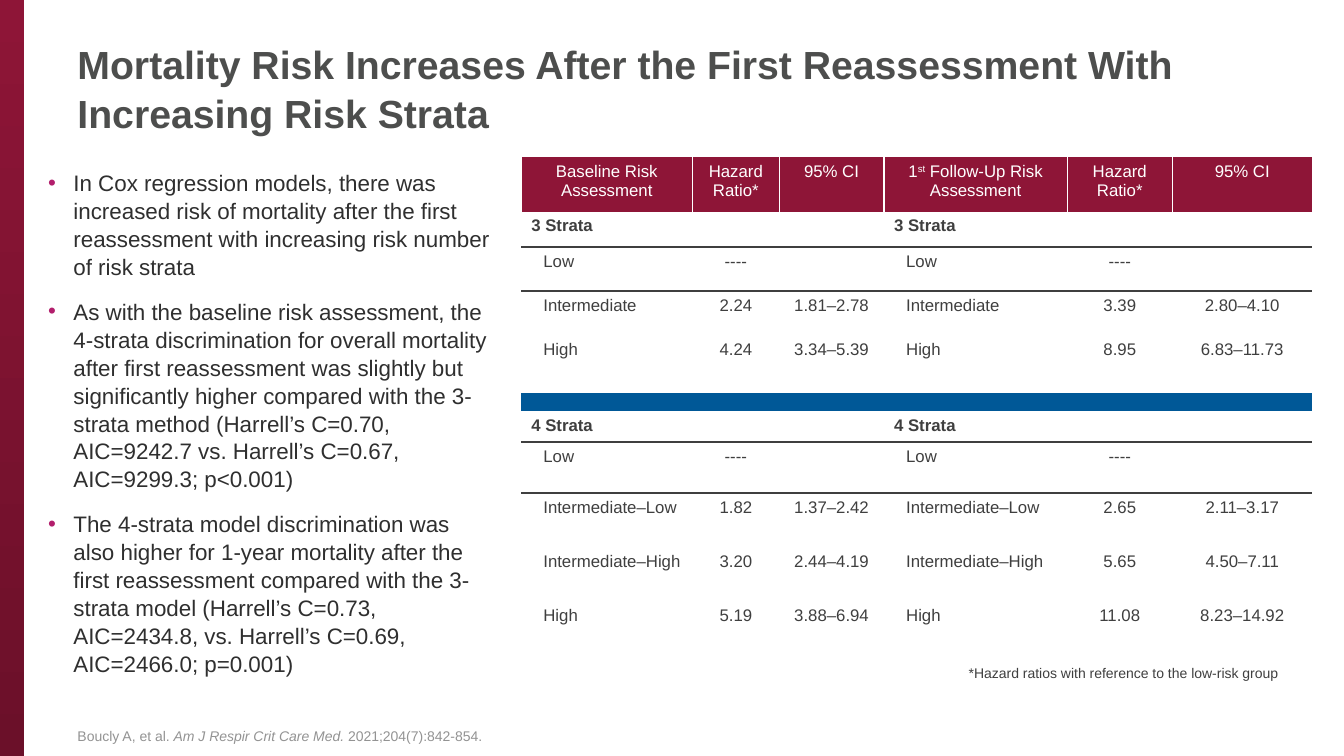
from lxml import etree
from pptx import Presentation
from pptx.dml.color import RGBColor
from pptx.enum.shapes import MSO_SHAPE
from pptx.enum.text import MSO_ANCHOR, PP_ALIGN
from pptx.oxml.ns import qn
from pptx.util import Inches, Pt

RECT = MSO_SHAPE.RECTANGLE
TOP, MIDDLE, BOTTOM = MSO_ANCHOR.TOP, MSO_ANCHOR.MIDDLE, MSO_ANCHOR.BOTTOM
LEFT, CENTER = PP_ALIGN.LEFT, PP_ALIGN.CENTER
NO_STYLE = "{2D5ABB26-0587-4C30-8999-92F81FD0307C}"
COLORS = {
    "wine": "8E1537", "deep_wine": "6B1029", "blue": "005897", "white": "FFFFFF",
    "title": "4D4E4D", "body": "2F2F2F", "cell": "3F3F3F", "source": "939393",
    "bullet": "B21E6C",
}
POINTS = [
    "In Cox regression models, there was increased risk of mortality after the first "
    "reassessment with increasing risk number of risk strata",
    "As with the baseline risk assessment, the 4-strata discrimination for overall mortality "
    "after first reassessment was slightly but significantly higher compared with the 3-strata "
    "method (Harrell’s C=0.70, AIC=9242.7 vs. Harrell’s C=0.67, AIC=9299.3; p<0.001)",
    "The 4-strata model discrimination was also higher for 1-year mortality after the first "
    "reassessment compared with the 3-strata model (Harrell’s C=0.73, AIC=2434.8, vs. "
    "Harrell’s C=0.69, AIC=2466.0; p=0.001)",
]
HEADER = [
    [("Baseline Risk Assessment", {})], [("Hazard Ratio*", {})], [("95% CI", {})],
    [("1", {}), ("st", {"baseline": 30000}), (" Follow-Up Risk Assessment", {})],
    [("Hazard Ratio*", {})], [("95% CI", {})],
]
RISKS = [
    ("3 Strata", "", "", "", ""),
    ("Low", "----", "", "----", ""),
    ("Intermediate", "2.24", "1.81–2.78", "3.39", "2.80–4.10"),
    ("High", "4.24", "3.34–5.39", "8.95", "6.83–11.73"),
    ("", "", "", "", ""),
    ("4 Strata", "", "", "", ""),
    ("Low", "----", "", "----", ""),
    ("Intermediate–Low", "1.82", "1.37–2.42", "2.65", "2.11–3.17"),
    ("Intermediate–High", "3.20", "2.44–4.19", "5.65", "4.50–7.11"),
    ("High", "5.19", "3.88–6.94", "11.08", "8.23–14.92"),
]
COL_SHARES = [12.75, 6.45, 7.8, 13.65, 7.8, 10.43]
ROW_SHARES = [7.2, 4.67, 5.87, 5.87, 7.6, 2.4, 4.13, 6.67, 7.2, 7.2, 5.87]


class Deck:
    """Draws styled elements on one slide, with lengths in percent of its size."""

    def __init__(self, font):
        self.font = font
        self.prs = Presentation()
        self.prs.slide_width, self.prs.slide_height = Inches(13.33), Inches(7.5)
        self.s = self.prs.slides.add_slide(self.prs.slide_layouts[6])

    def x(self, share):
        return int(self.prs.slide_width * share / 100)

    def y(self, share):
        return int(self.prs.slide_height * share / 100)

    def box(self, left, top, width, height):
        return self.x(left), self.y(top), self.x(width), self.y(height)

    def color(self, name):
        return RGBColor.from_string(COLORS[name])

    def run(self, p, text, size, color, bold=False, italic=False, baseline=0):
        r = p.add_run()
        r.text = text
        r.font.name, r.font.size = self.font, Pt(size)
        r.font.bold, r.font.italic = bold, italic
        r.font.color.rgb = self.color(color)
        if baseline:
            r.font._element.set("baseline", str(baseline))

    def band(self, box, start, end):
        sp = self.s.shapes.add_shape(RECT, *self.box(*box))
        sp.shadow.inherit = False
        sp.line.fill.background()
        sp.fill.gradient()
        sp.fill.gradient_angle = 270
        for stop, name in zip(sp.fill.gradient_stops, (start, end)):
            stop.color.rgb = self.color(name)

    def text(self, box, runs, size, color, anchor=TOP, wrap=True, spacing=1.0):
        tf = self.s.shapes.add_textbox(*self.box(*box)).text_frame
        tf.word_wrap, tf.vertical_anchor = wrap, anchor
        p = tf.paragraphs[0]
        p.line_spacing = spacing
        for text, style in runs:
            self.run(p, text, size, color, **style)

    def bullets(self, box, items, size, color):
        tf = self.s.shapes.add_textbox(*self.box(*box)).text_frame
        tf.word_wrap = True
        for i, item in enumerate(items):
            p = tf.add_paragraph() if i else tf.paragraphs[0]
            p.line_spacing = 1.04
            p.space_before = p.space_after = Pt(6)
            pPr = p._p.get_or_add_pPr()
            pPr.set("marL", str(Inches(0.25)))
            pPr.set("indent", str(-Inches(0.25)))
            clr = etree.SubElement(pPr, qn("a:buClr"))
            etree.SubElement(clr, qn("a:srgbClr")).set("val", COLORS["bullet"])
            etree.SubElement(pPr, qn("a:buFont")).set("typeface", self.font)
            etree.SubElement(pPr, qn("a:buChar")).set("char", "•")
            self.run(p, item, size, color)

    def border(self, cell, side, color, width):
        tcPr = cell._tc.get_or_add_tcPr()
        ln = etree.SubElement(tcPr, qn(f"a:{side}"))
        ln.set("w", str(Pt(width)))
        fill = etree.SubElement(ln, qn("a:solidFill"))
        etree.SubElement(fill, qn("a:srgbClr")).set("val", COLORS[color])

    def cell(self, cell, runs, align=LEFT, indent=0, fill=None, color="cell", size=12):
        p = cell.text_frame.paragraphs[0]
        p.alignment = align
        p._p.get_or_add_pPr().set("marL", str(Inches(indent)))
        for text, style in runs:
            self.run(p, text, size, color, **style)
        if not runs:
            etree.SubElement(p._p, qn("a:endParaRPr")).set("sz", str(size * 100))
        if fill:
            cell.fill.solid()
            cell.fill.fore_color.rgb = self.color(fill)
        else:
            cell.fill.background()

    def table(self, left, top, cols, rows):
        shape = self.s.shapes.add_table(
            len(rows), len(cols), *self.box(left, top, sum(cols), sum(rows)))
        tbl = shape.table
        tbl._tbl.tblPr.find(qn("a:tableStyleId")).text = NO_STYLE
        tbl.first_row = tbl.horz_banding = False
        for col, share in zip(tbl.columns, cols):
            col.width = self.x(share)
        for row, share in zip(tbl.rows, rows):
            row.height = self.y(share)
        return tbl

    def risk_row(self, cells, label, *values):
        heading = label.endswith("Strata")
        texts = [label, *values[:2], label, *values[2:]]
        for i, (cell, text) in enumerate(zip(cells, texts)):
            if not label:
                cell.margin_top = cell.margin_bottom = 0
                self.cell(cell, [], fill="blue", size=4)
                continue
            if heading or label == "Low":
                self.border(cell, "lnB", "cell", 1.5)
            is_label = i % 3 == 0
            self.cell(cell, [(text, {"bold": heading})] if text else [],
                      LEFT if is_label else CENTER,
                      0.12 if is_label and not heading else 0)


def main():
    d = Deck("Arial")
    d.band((0, 0, 1.8, 100), "wine", "deep_wine")
    d.text((5.03, 92.67, 88.15, 6.4),
           [("Boucly A, et al. ", {}), ("Am J Respir Crit Care Med. ", {"italic": True}),
            ("2021;204(7):842-854.", {})], 10, "source", BOTTOM)
    d.text((5.03, 2.93, 88.15, 17.33),
           [("Mortality Risk Increases After the First Reassessment With "
             "Increasing Risk Strata", {"bold": True})], 28, "title", MIDDLE, spacing=1.04)
    d.bullets((2.85, 21.6, 34.43, 68.8), POINTS, 16, "body")
    tbl = d.table(38.78, 20.8, COL_SHARES, ROW_SHARES)
    for cell, runs in zip(tbl.rows[0].cells, HEADER):
        for side in ("lnL", "lnR"):
            d.border(cell, side, "white", 1)
        d.cell(cell, runs, CENTER, fill="wine", color="white")
    for i, risk in enumerate(RISKS, 1):
        d.risk_row(tbl.rows[i].cells, *risk)
    d.text((71.34, 87.2, 24.91, 3.6),
           [("*Hazard ratios with reference to the low-risk group", {})],
           10, "cell", wrap=False)
    d.prs.save("out.pptx")


if __name__ == "__main__":
    main()
